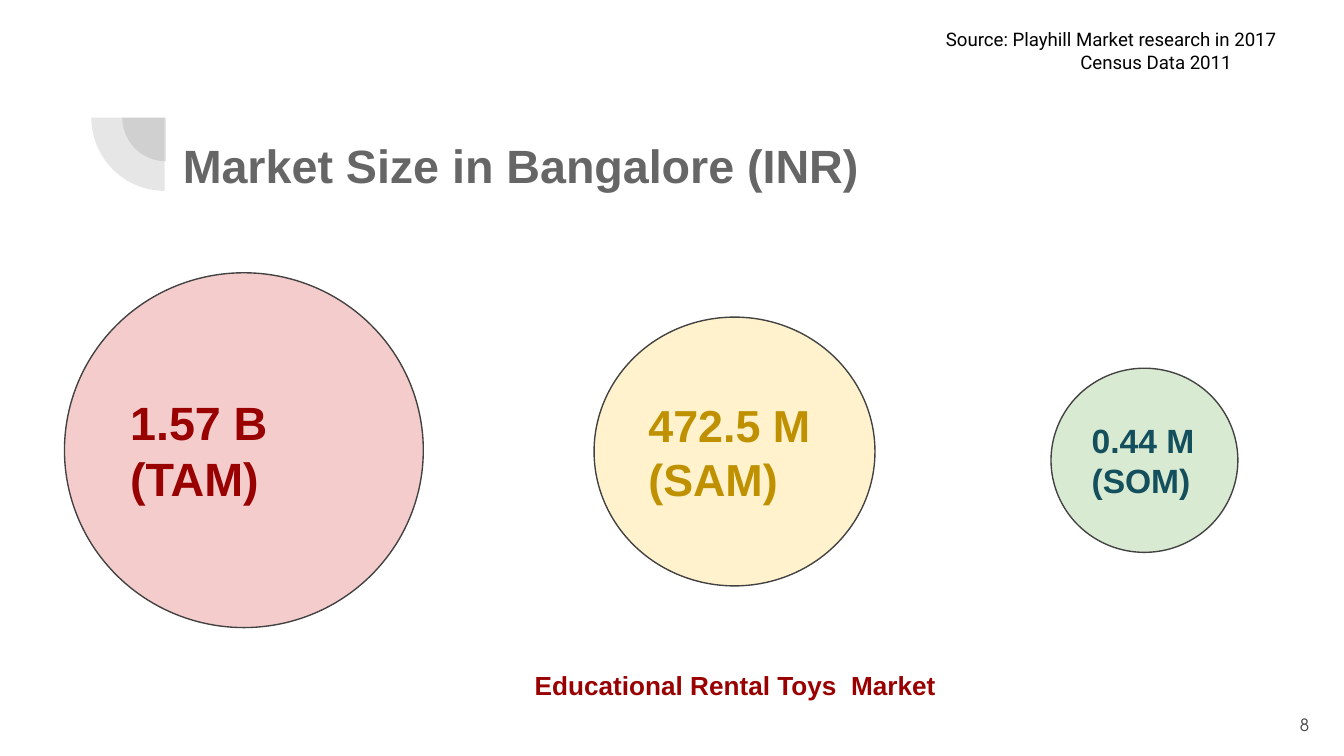
from dataclasses import dataclass

from lxml import etree
from pptx import Presentation
from pptx import util as u
from pptx.dml import color
from pptx.enum import shapes, text
from pptx.oxml import ns

PX = 9144
COLORS = {
    "ink": "424242",
    "title": "666666",
    "black": "000000",
    "red": "990000",
    "pink": "F4CCCC",
    "gold": "BF9000",
    "cream": "FFF2CC",
    "teal": "134F5C",
    "mint": "D9EAD3",
}
FRAME = {
    "word_wrap": True,
    "auto_size": text.MSO_AUTO_SIZE.NONE,
    "margin_left": 10 * PX,
    "margin_right": 10 * PX,
    "margin_top": 10 * PX,
    "margin_bottom": 10 * PX,
}


@dataclass
class Box:
    left: int
    top: int
    width: int
    height: int

    def emu(self) -> list[int]:
        return [v * PX for v in (self.left, self.top, self.width, self.height)]


@dataclass
class Style:
    size: int
    color: str
    font: str = "Arial"
    bold: bool = True
    align: text.PP_ALIGN = text.PP_ALIGN.LEFT
    anchor: text.MSO_ANCHOR = text.MSO_ANCHOR.TOP


@dataclass
class Market:
    box: Box
    value: str
    label: str
    size: int
    fill: str
    color: str


MARKETS = [
    Market(Box(48, 203, 267, 264), "1.57 B", "(TAM)", 25, "pink", "red"),
    Market(Box(442, 236, 209, 200), "472.5 M", "(SAM)", 24, "cream", "gold"),
    Market(Box(782, 274, 139, 137), "0.44 M", "(SOM)", 18, "mint", "teal"),
]
PIES = [Box(91, 55, 65, 65), Box(68, 33, 109, 109)]


def rgb(name: str) -> color.RGBColor:
    return color.RGBColor.from_string(COLORS[name])


def set_all(obj, values: dict) -> None:
    for name, value in values.items():
        setattr(obj, name, value)


def write(sp, lines: list[str], style: Style) -> None:
    tf = sp.text_frame
    set_all(tf, FRAME | {"vertical_anchor": style.anchor})
    for i, line in enumerate(lines):
        p = tf.add_paragraph() if i else tf.paragraphs[0]
        p.alignment = style.align
        r = p.add_run()
        r.text = line
        set_all(r.font, {"name": style.font, "size": u.Pt(style.size), "bold": style.bold})
        r.font.color.rgb = rgb(style.color)


def add_text(s, box: Box, lines: list[str], style: Style):
    sp = s.shapes.add_textbox(*box.emu())
    write(sp, lines, style)
    return sp


def add_filled(s, kind: shapes.MSO_SHAPE, box: Box, fill: str):
    sp = s.shapes.add_shape(kind, *box.emu())
    sp.shadow.inherit = False
    sp.fill.solid()
    sp.fill.fore_color.rgb = rgb(fill)
    return sp


def add_pie(s, box: Box) -> None:
    sp = add_filled(s, shapes.MSO_SHAPE.PIE, box, "ink")
    sp.adjustments[0], sp.adjustments[1] = 108, 162
    sp.rotation = 270
    sp.line.fill.background()
    clr = sp.fill._xPr.find(".//" + ns.qn("a:srgbClr"))
    etree.SubElement(clr, ns.qn("a:alpha"), val="13000")


def add_market(s, m: Market) -> None:
    sp = add_filled(s, shapes.MSO_SHAPE.OVAL, m.box, m.fill)
    sp.line.color.rgb = rgb("ink")
    sp.line.width = u.Pt(0.75)
    write(sp, [m.value, m.label], Style(m.size, m.color, anchor=text.MSO_ANCHOR.MIDDLE))


def main() -> None:
    prs = Presentation()
    prs.slide_width = 1000 * PX
    prs.slide_height = prs.slide_width * 9 // 16
    s = prs.slides.add_slide(prs.slide_layouts[5])

    for box in PIES:
        add_pie(s, box)

    title = s.shapes.title
    title.left, title.top, title.width, title.height = Box(126, 92, 841, 59).emu()
    write(title, ["Market Size in Bangalore (INR)"], Style(25, "title"))

    for m in MARKETS:
        add_market(s, m)

    caption = add_text(s, Box(388, 465, 355, 63),
                       ["Educational Rental Toys  Market"], Style(14, "red"))
    caption.text_frame.margin_top = 33 * PX

    add_text(s, Box(924, 518, 60, 43), ["8"],
             Style(9, "ink", "TeX Gyre Adventor", False,
                   text.PP_ALIGN.RIGHT, text.MSO_ANCHOR.MIDDLE))

    source = add_text(s, Box(694, 11, 294, 52),
                      ["Source: Playhill Market research in 2017", "Census Data 2011"],
                      Style(10, "black", "Roboto", False))
    source.text_frame.paragraphs[1]._p.get_or_add_pPr().set("marL", str(100 * PX))

    prs.save("out.pptx")


if __name__ == "__main__":
    main()
